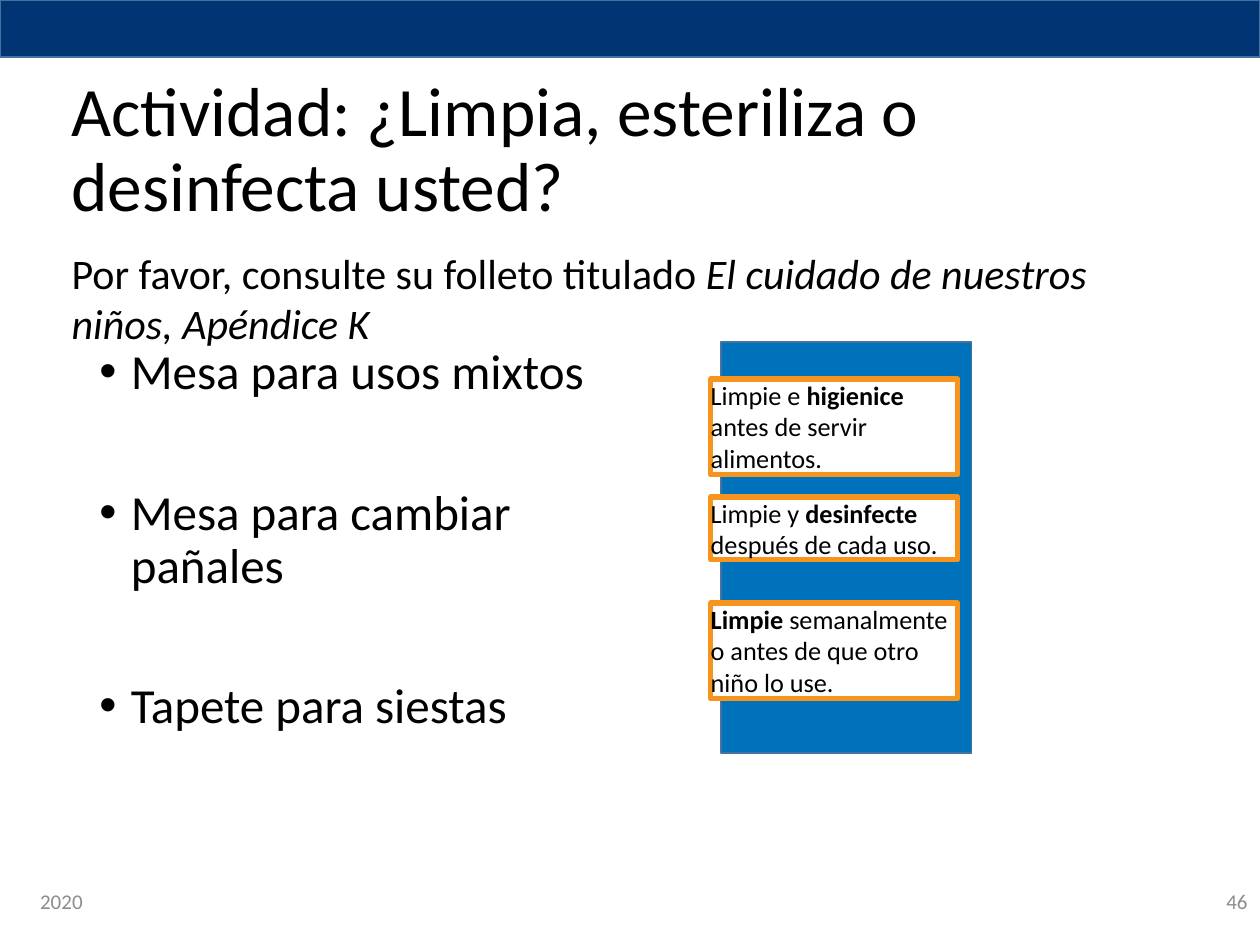
from collections import namedtuple
from dataclasses import dataclass
from lxml import etree
from pptx import Presentation, util as u
from pptx.dml.color import RGBColor
from pptx.enum import shapes, text
from pptx.oxml import ns

Box = namedtuple("Box", "x y w h")


@dataclass(frozen=True)
class Theme:
    """Colours, font and type sizes of the slide."""
    font: str = "Calibri"
    ink: str = "000000"
    grey: str = "8C8C8C"
    paper: str = "FFFFFF"
    navy: str = "003473"
    blue: str = "0072BC"
    edge: str = "43739E"
    gold: str = "F7941E"
    head: float = 39.6
    item: float = 28
    lead: float = 24
    card: float = 15
    foot: float = 12


T = Theme()
PAGE = Box(0, 0, u.Inches(10), u.Inches(7.5))
MID = text.MSO_ANCHOR.MIDDLE


def part(box, x, y, w, h):
    """Return the part of a box given by shares of its size."""
    return Box(round(box.x + x * box.w), round(box.y + y * box.h),
               round(w * box.w), round(h * box.h))


def style(obj, vals):
    """Set each named value on an object."""
    for key, val in vals.items():
        setattr(obj, key, val)


def write(para, runs, size, color=T.ink, **form):
    """Fill a paragraph with (words, font values) runs."""
    style(para, form)
    for words, face in runs:
        run = para.add_run()
        run.text = words
        style(run.font, {"name": T.font, "size": u.Pt(size), **face})
        run.font.color.rgb = RGBColor.from_string(color)


def field(slide, box, **frame):
    """Add a wrapping text box and return its text frame."""
    tf = slide.shapes.add_textbox(*box).text_frame
    style(tf, {"word_wrap": True, **frame})
    return tf


def rect(slide, box, fill, edge, width=1):
    """Add a plain bordered rectangle."""
    shape = slide.shapes.add_shape(shapes.MSO_SHAPE.RECTANGLE, *box)
    shape.shadow.inherit = False
    shape.fill.solid()
    shape.fill.fore_color.rgb = RGBColor.from_string(fill)
    shape.line.color.rgb = RGBColor.from_string(edge)
    shape.line.width = u.Pt(width)
    return shape


def bullet(para):
    """Give a paragraph a hanging round bullet."""
    props = para._p.get_or_add_pPr()
    style_vals = {"marL": u.Inches(0.25), "indent": -u.Inches(0.25)}
    for key, val in style_vals.items():
        props.set(key, str(val))
    etree.SubElement(props, ns.qn("a:buFont")).set("typeface", "Arial")
    etree.SubElement(props, ns.qn("a:buChar")).set("char", "•")


def title(slide, box, words):
    """Place the heading in its box."""
    tf = field(slide, box, vertical_anchor=MID)
    write(tf.paragraphs[0], [(words, {})], T.head, line_spacing=0.9)


def lead(slide, box, runs):
    """Place the introductory sentence."""
    tf = field(slide, box)
    write(tf.paragraphs[0], runs, T.lead, space_after=u.Pt(8))


def items(slide, box, lines):
    """Place the widely spaced bullet list."""
    tf = field(slide, box)
    for i, line in enumerate(lines):
        para = tf.add_paragraph() if i else tf.paragraphs[0]
        bullet(para)
        write(para, [(line, {})], T.item, line_spacing=0.9,
              space_before=u.Pt(50 if i else 0))


def cards(slide, box, rows):
    """Place answer cards over a blue panel."""
    rect(slide, box, T.blue, T.edge)
    for top, high, runs in rows:
        spot = part(box, -0.04, top, 0.985, high)
        tf = rect(slide, spot, T.paper, T.gold, 3).text_frame
        style(tf, {"word_wrap": True, "vertical_anchor": text.MSO_ANCHOR.TOP,
                   "margin_left": 0, "margin_right": 0,
                   "margin_top": 0, "margin_bottom": 0})
        write(tf.paragraphs[0], runs, T.card, alignment=text.PP_ALIGN.LEFT)


def foot(slide, box, year, page):
    """Place the year at the left and the page number at the right."""
    sides = ((0, year, text.PP_ALIGN.LEFT), (0.77, page, text.PP_ALIGN.RIGHT))
    for left, words, side in sides:
        tf = field(slide, part(box, left, 0, 0.23, 1), vertical_anchor=MID)
        write(tf.paragraphs[0], [(words, {})], T.foot, T.grey, alignment=side)


def main():
    """Build the activity slide."""
    deck = Presentation()
    style(deck, {"slide_width": PAGE.w, "slide_height": PAGE.h})
    slide = deck.slides.add_slide(deck.slide_layouts[6])
    bold = {"bold": True}
    cards(slide, part(PAGE, 0.572, 0.362, 0.199, 0.435), [
        (0.09, 0.233, [("Limpie e ", {}), ("higienice", bold),
                       (" antes de servir alimentos.", {})]),
        (0.377, 0.153, [("Limpie y ", {}), ("desinfecte ", bold),
                        ("después de cada uso.", {})]),
        (0.635, 0.233, [("Limpie ", bold),
                        ("semanalmente o antes de que otro niño lo use.", {})]),
    ])
    title(slide, part(PAGE, 0.047, 0.072, 0.894, 0.177),
          "Actividad: ¿Limpia, esteriliza o desinfecta usted?")
    items(slide, part(PAGE, 0.069, 0.361, 0.425, 0.54),
          ["Mesa para usos mixtos", "Mesa para cambiar pañales",
           "Tapete para siestas"])
    lead(slide, part(PAGE, 0.047, 0.255, 0.893, 0.05),
         [("Por favor, consulte su folleto titulado ", {}),
          ("El cuidado de nuestros niños, Apéndice K", {"italic": True})])
    foot(slide, part(PAGE, 0.022, 0.927, 0.978, 0.053), "2020", "46")
    rect(slide, part(PAGE, 0, 0, 1, 0.06), T.navy, T.edge)
    deck.save("out.pptx")


if __name__ == "__main__":
    main()
